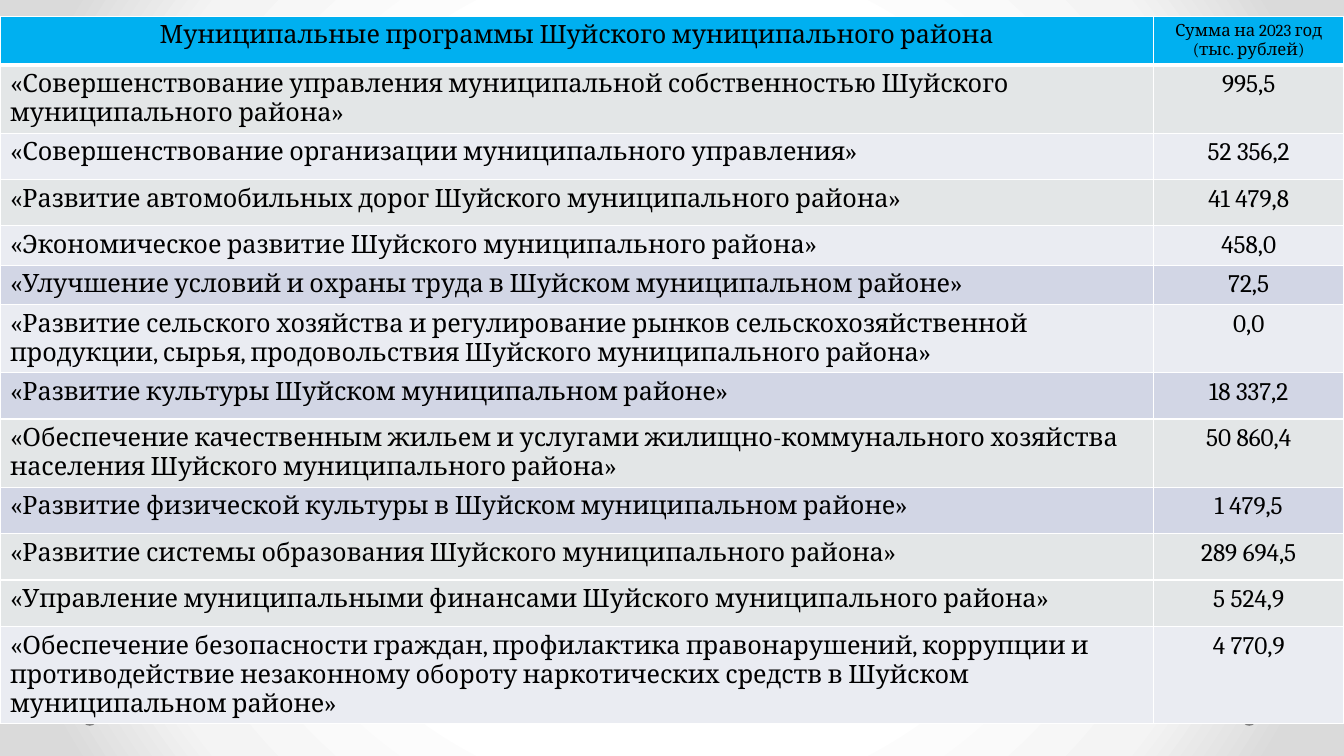
from pptx import Presentation
from pptx.dml.color import RGBColor
from pptx.enum.shapes import MSO_SHAPE
from pptx.enum.text import PP_ALIGN
from pptx.oxml import parse_xml
from pptx.oxml.ns import nsdecls, qn
from pptx.util import Inches, Pt

BLACK = RGBColor(0x00, 0x00, 0x00)
WHITE = RGBColor(0xFF, 0xFF, 0xFF)
DOT_GRAY = RGBColor(0x80, 0x80, 0x80)
HEADER_BLUE = RGBColor(0x00, 0xB0, 0xF0)
GRAY = RGBColor(0xE3, 0xE6, 0xE7)
PALE = RGBColor(0xEA, 0xEC, 0xF2)
LILAC = RGBColor(0xD2, 0xD6, 0xE5)
BACKGROUND_STOPS = [
    (50, WHITE),
    (76, RGBColor(0xF4, 0xF4, 0xF4)),
    (92, RGBColor(0xDA, 0xDA, 0xDA)),
]

FONT = "Cambria"
COLUMN_WIDTHS = [11.44, 1.89]
HEADER = ["Муниципальные программы Шуйского муниципального района",
          "Сумма на 2023 год (тыс. рублей)"]
# Programme, amount, row fill, minimum row height
PROGRAMMES = [
    ("«Совершенствование управления муниципальной собственностью Шуйского муниципального района»",
     "995,5", GRAY, 0.52),
    ("«Совершенствование организации муниципального управления»", "52 356,2", PALE, 0.46),
    ("«Развитие автомобильных дорог Шуйского муниципального района»", "41 479,8", GRAY, 0.46),
    ("«Экономическое развитие Шуйского муниципального района»", "458,0", PALE, 0.23),
    ("«Улучшение условий и охраны труда в Шуйском муниципальном районе»", "72,5", LILAC, 0.35),
    ("«Развитие сельского хозяйства и регулирование рынков сельскохозяйственной продукции, "
     "сырья, продовольствия Шуйского муниципального района»", "0,0", PALE, 0.35),
    ("«Развитие культуры Шуйском муниципальном районе»", "18 337,2", LILAC, 0.46),
    ("«Обеспечение качественным жильем и услугами жилищно-коммунального хозяйства населения "
     "Шуйского муниципального района»", "50 860,4", GRAY, 0.46),
    ("«Развитие физической культуры в Шуйском муниципальном районе»", "1 479,5", LILAC, 0.46),
    ("«Развитие системы образования Шуйского муниципального района»", "289 694,5", GRAY, 0.46),
    ("«Управление муниципальными финансами Шуйского муниципального района»",
     "5 524,9", GRAY, 0.46),
    ("«Обеспечение безопасности граждан, профилактика правонарушений, коррупции и "
     "противодействие незаконному обороту наркотических средств в Шуйском муниципальном районе»",
     "4 770,9", PALE, 0.46),
]


def line_xml(tag, color, width):
    return parse_xml(
        f'<a:{tag} {nsdecls("a")} w="{Pt(width)}"><a:solidFill>'
        f'<a:srgbClr val="{color}"/></a:solidFill></a:{tag}>')


def set_background(slide):
    """Give the slide a circular gradient that darkens outwards."""
    stops = "".join(
        f'<a:gs pos="{position * 1000}"><a:srgbClr val="{color}"/></a:gs>'
        for position, color in BACKGROUND_STOPS)
    background = parse_xml(
        f'<p:bg {nsdecls("p", "a")}><p:bgPr><a:gradFill rotWithShape="1">'
        f'<a:gsLst>{stops}</a:gsLst><a:path path="circle">'
        '<a:fillToRect l="50000" t="50000" r="50000" b="50000"/></a:path>'
        '</a:gradFill><a:effectLst/></p:bgPr></p:bg>')
    slide.element.find(qn("p:cSld")).insert(0, background)


def add_dot(slide, left):
    dot = slide.shapes.add_shape(
        MSO_SHAPE.OVAL, Inches(left), Inches(7.11), Inches(0.12), Inches(0.09))
    dot.shadow.inherit = False
    dot.fill.solid()
    dot.fill.fore_color.rgb = DOT_GRAY
    dot.line.fill.background()


def set_borders(cell, top=1, bottom=1):
    properties = cell._tc.get_or_add_tcPr()
    for tag, width in (("lnL", 1), ("lnR", 1), ("lnT", top), ("lnB", bottom)):
        properties.append(line_xml(tag, WHITE, width))


def fill_cell(cell, text, fill, size=18, centered=False):
    cell.fill.solid()
    cell.fill.fore_color.rgb = fill
    cell.text_frame.text = text
    paragraph = cell.text_frame.paragraphs[0]
    paragraph.alignment = PP_ALIGN.CENTER if centered else PP_ALIGN.LEFT
    run = paragraph.runs[0]
    run.font.name = FONT
    run.font.size = Pt(size)
    run.font.bold = False
    run.font.color.rgb = BLACK
    run.font._element.insert(0, line_xml("ln", BLACK, 0.75))


def add_programme_table(slide):
    heights = [0.23] + [height for *_, height in PROGRAMMES]
    table = slide.shapes.add_table(
        len(heights), len(COLUMN_WIDTHS), Inches(0), Inches(0.16),
        Inches(sum(COLUMN_WIDTHS)), Inches(sum(heights))).table
    for column, width in zip(table.columns, COLUMN_WIDTHS):
        column.width = Inches(width)
    for index, (row, height) in enumerate(zip(table.rows, heights)):
        row.height = Inches(height)
        for cell in row.cells:
            set_borders(cell, top=3 if index == 1 else 1, bottom=3 if index == 0 else 1)

    for column, (text, size) in enumerate(zip(HEADER, (18, 12))):
        fill_cell(table.cell(0, column), text, HEADER_BLUE, size, centered=True)
    for row, (programme, amount, fill, _) in enumerate(PROGRAMMES, start=1):
        fill_cell(table.cell(row, 0), programme, fill)
        fill_cell(table.cell(row, 1), amount, fill, centered=True)


def main():
    presentation = Presentation()
    presentation.slide_width = Inches(13.33)
    presentation.slide_height = Inches(7.5)
    slide = presentation.slides.add_slide(presentation.slide_layouts[6])
    set_background(slide)
    for left in (12.33, 0.83):
        add_dot(slide, left)
    add_programme_table(slide)
    presentation.save("out.pptx")


if __name__ == "__main__":
    main()
